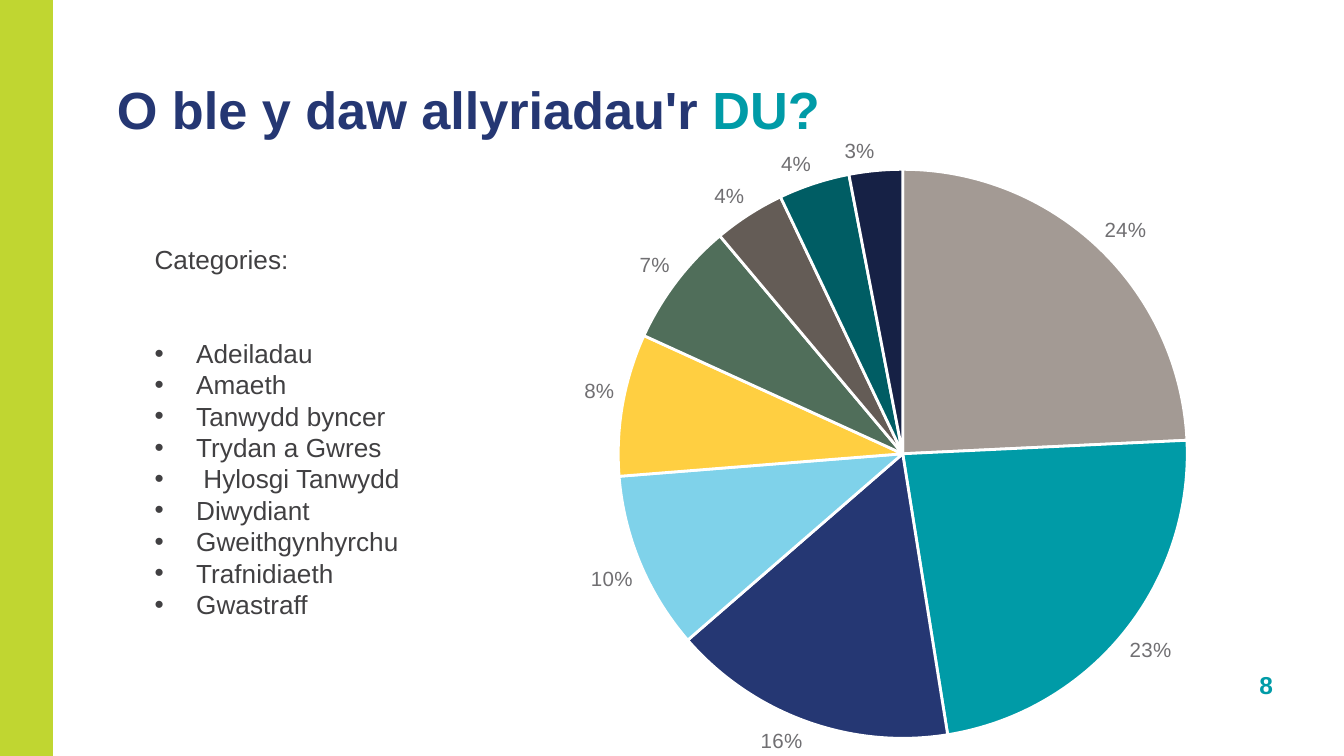
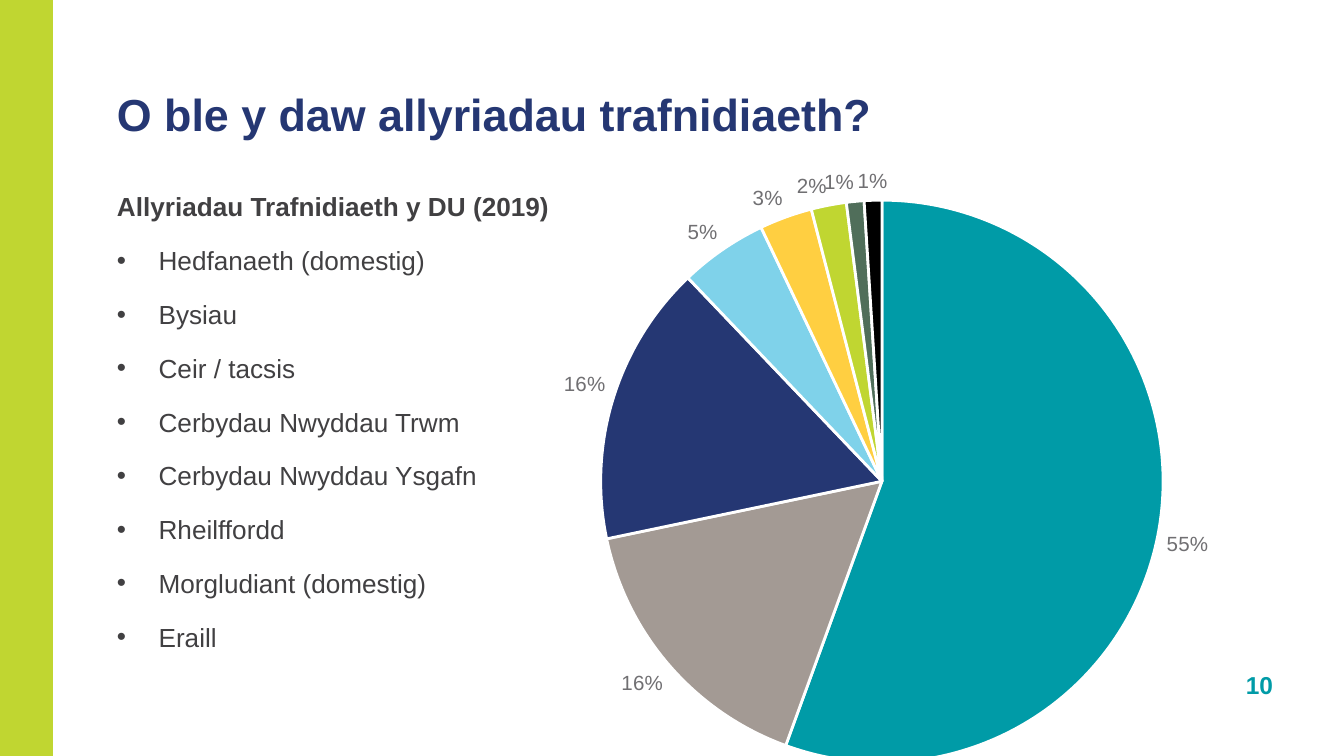
from dataclasses import dataclass

from lxml.etree import SubElement
from pptx import Presentation
from pptx.chart.data import CategoryChartData
from pptx.dml.color import RGBColor
from pptx.enum.chart import XL_CHART_TYPE as ChartType, XL_LABEL_POSITION as LabelPosition
from pptx.enum.shapes import MSO_SHAPE as Preset
from pptx.enum.text import MSO_ANCHOR as Anchor, MSO_AUTO_SIZE as AutoSize, PP_ALIGN as Align
from pptx.oxml.ns import qn
from pptx.util import Emu, Pt

PX = 4572  # 200 px to the inch


@dataclass(frozen=True)
class Theme:
    font: str = "Arial"
    lime: str = "C0D631"
    teal: str = "009BA7"
    navy: str = "253773"
    stone: str = "A39A94"
    sky: str = "7FD2EA"
    amber: str = "FFCF41"
    moss: str = "506E5A"
    umber: str = "645C56"
    pine: str = "005D64"
    midnight: str = "162145"
    black: str = "000000"
    white: str = "FFFFFF"
    ink: str = "414042"
    label_grey: str = "706F72"
    body_size: float = 14
    line_pitch: float = 16.8
    number_size: float = 13.1
    chart_size: float = 10
    label_size: float = 11
    bullet_indent: int = 62


THEME = Theme()


def px(*lengths):
    return [Emu(length * PX) for length in lengths]


def rgb(color):
    return RGBColor.from_string(color)


def style_font(font, size, color, bold=False):
    font.name, font.size, font.bold = THEME.font, Pt(size), bold
    font.color.rgb = rgb(color)


def set_bullet(para, bullet):
    indent = THEME.bullet_indent * PX if bullet else 0
    props = para._p.get_or_add_pPr()
    props.set("marL", str(indent))
    props.set("indent", str(-indent))
    if bullet:
        SubElement(props, qn("a:buFont"), typeface=THEME.font)
        SubElement(props, qn("a:buChar"), char="•")
    else:
        SubElement(props, qn("a:buNone"))


def write(para, text, size=THEME.body_size, color=THEME.ink, bold=False,
          bullet=False, align=Align.LEFT, pitch=None, after=0):
    """Fill a paragraph; text is a string or a list of (string, color) spans."""
    set_bullet(para, bullet)
    para.alignment = align
    para.space_before, para.space_after = Pt(0), Pt(after)
    if pitch:
        para.line_spacing = Pt(pitch)
    for words, span_color in [(text, color)] if isinstance(text, str) else text:
        span = para.add_run()
        span.text = words
        style_font(span.font, size, span_color, bold)


def place(shape, box, anchor=Anchor.TOP, inset=0):
    """Move a text shape to its box and return its text frame."""
    shape.left, shape.top, shape.width, shape.height = px(*box)
    frame = shape.text_frame
    frame.word_wrap = True
    frame.auto_size = AutoSize.NONE
    frame.vertical_anchor = anchor
    frame.margin_left = frame.margin_right = Emu(inset * PX)
    frame.margin_top = frame.margin_bottom = Emu(inset * PX)
    return frame


def add_band(page):
    band = page.shapes.add_shape(Preset.RECTANGLE, *px(-24, -8, 103, 1142))
    band.shadow.inherit = False
    band.fill.solid()
    band.fill.fore_color.rgb = rgb(THEME.lime)
    band.line.fill.background()


def add_page_number(page, number):
    box = page.shapes.add_textbox(*px(0, 0, 1, 1))
    frame = place(box, (1756, 986, 158, 64), Anchor.BOTTOM, inset=10)
    frame.margin_left = frame.margin_right = Emu(20 * PX)
    write(frame.paragraphs[0], number, THEME.number_size, THEME.teal, bold=True, align=Align.RIGHT)


def fill_title(page, width, text, size):
    frame = place(page.shapes.title, (174, 122, width, 87), Anchor.BOTTOM)
    write(frame.paragraphs[0], text, size, THEME.navy, bold=True)


def fill_list(page, box, heading, items, inset=0, bold=False, heading_after=0, item_after=0):
    frame = place(page.placeholders[1], box, inset=inset)
    write(frame.paragraphs[0], heading, bold=bold, pitch=THEME.line_pitch, after=heading_after)
    for item in items:
        write(frame.add_paragraph(), item, bullet=True, pitch=THEME.line_pitch, after=item_after)


def fix_pie(chart, box, pie):
    """Pin the pie's (left, top, diameter) within the chart box."""
    left, top, width, height = box
    pie_left, pie_top, diameter = pie
    area = chart._chartSpace.chart.plotArea
    for old in area.findall(qn("c:layout")):
        area.remove(old)
    layout = SubElement(area, qn("c:layout"))
    area.insert(0, layout)
    manual = SubElement(layout, qn("c:manualLayout"))
    settings = {
        "layoutTarget": "inner", "xMode": "edge", "yMode": "edge",
        "x": (pie_left - left) / width, "y": (pie_top - top) / height,
        "w": diameter / width, "h": diameter / height,
    }
    for name, value in settings.items():
        SubElement(manual, qn(f"c:{name}"), val=str(value))


def add_pie(page, box, pie, values, colors, show_percent):
    data = CategoryChartData()
    data.categories = [str(index + 1) for index in range(len(values))]
    data.add_series("Series 1", values)
    chart = page.shapes.add_chart(ChartType.PIE, *px(*box), data).chart
    chart.has_title = chart.has_legend = False
    style_font(chart.font, THEME.chart_size, THEME.ink)
    fix_pie(chart, box, pie)

    plot = chart.plots[0]
    plot.vary_by_categories = True
    for index, color in enumerate(colors):
        slice_format = plot.series[0].points[index].format
        slice_format.fill.solid()
        slice_format.fill.fore_color.rgb = rgb(color)
        slice_format.line.color.rgb = rgb(THEME.white)
        slice_format.line.width = Pt(1.5)

    labels = plot.series[0].data_labels
    labels.show_percentage, labels.show_value = show_percent, not show_percent
    labels.number_format, labels.number_format_is_linked = "0%", False
    labels.position = LabelPosition.OUTSIDE_END
    style_font(labels.font, THEME.label_size, THEME.label_grey)


def start_page(deck, number):
    page = deck.slides.add_slide(deck.slide_layouts[1])
    add_band(page)
    add_page_number(page, number)
    return page


def build_uk_emissions(deck):
    page = start_page(deck, "8")
    fill_title(page, 1426, [("O ble y daw allyriadau'r ", THEME.navy), ("DU?", THEME.teal)], 28)
    fill_list(
        page, (210, 342, 458, 606), "Categories:",
        ["Adeiladau", "Amaeth", "Tanwydd byncer", "Trydan a Gwres", " Hylosgi Tanwydd",
         "Diwydiant", "Gweithgynhyrchu", "Trafnidiaeth", "Gwastraff"],
        inset=20, heading_after=2 * THEME.line_pitch)
    add_pie(
        page, (654, 178, 1344, 982), (920, 252, 847), [24, 23, 16, 10, 8, 7, 4, 4, 3],
        [THEME.stone, THEME.teal, THEME.navy, THEME.sky, THEME.amber,
         THEME.moss, THEME.umber, THEME.pine, THEME.midnight],
        show_percent=True)


def build_transport_emissions(deck):
    page = start_page(deck, "10")
    fill_title(page, 1488, "O ble y daw allyriadau trafnidiaeth?", 24)
    fill_list(
        page, (174, 284, 938, 642), "Allyriadau Trafnidiaeth y DU (2019)",
        ["Hedfanaeth (domestig)", "Bysiau", "Ceir / tacsis", "Cerbydau Nwyddau Trwm",
         "Cerbydau Nwyddau Ysgafn", "Rheilffordd", "Morgludiant (domestig)", "Eraill"],
        bold=True, heading_after=12, item_after=12)
    add_pie(
        page, (686, 222, 1260, 940), (894, 298, 837),
        [0.55, 0.16, 0.16, 0.05, 0.03, 0.02, 0.01, 0.01],
        [THEME.teal, THEME.stone, THEME.navy, THEME.sky,
         THEME.amber, THEME.lime, THEME.moss, THEME.black],
        show_percent=False)


def main():
    deck = Presentation()
    deck.slide_width, deck.slide_height = px(2000, 1125)
    build_uk_emissions(deck)
    build_transport_emissions(deck)
    deck.save("out.pptx")


if __name__ == "__main__":
    main()
